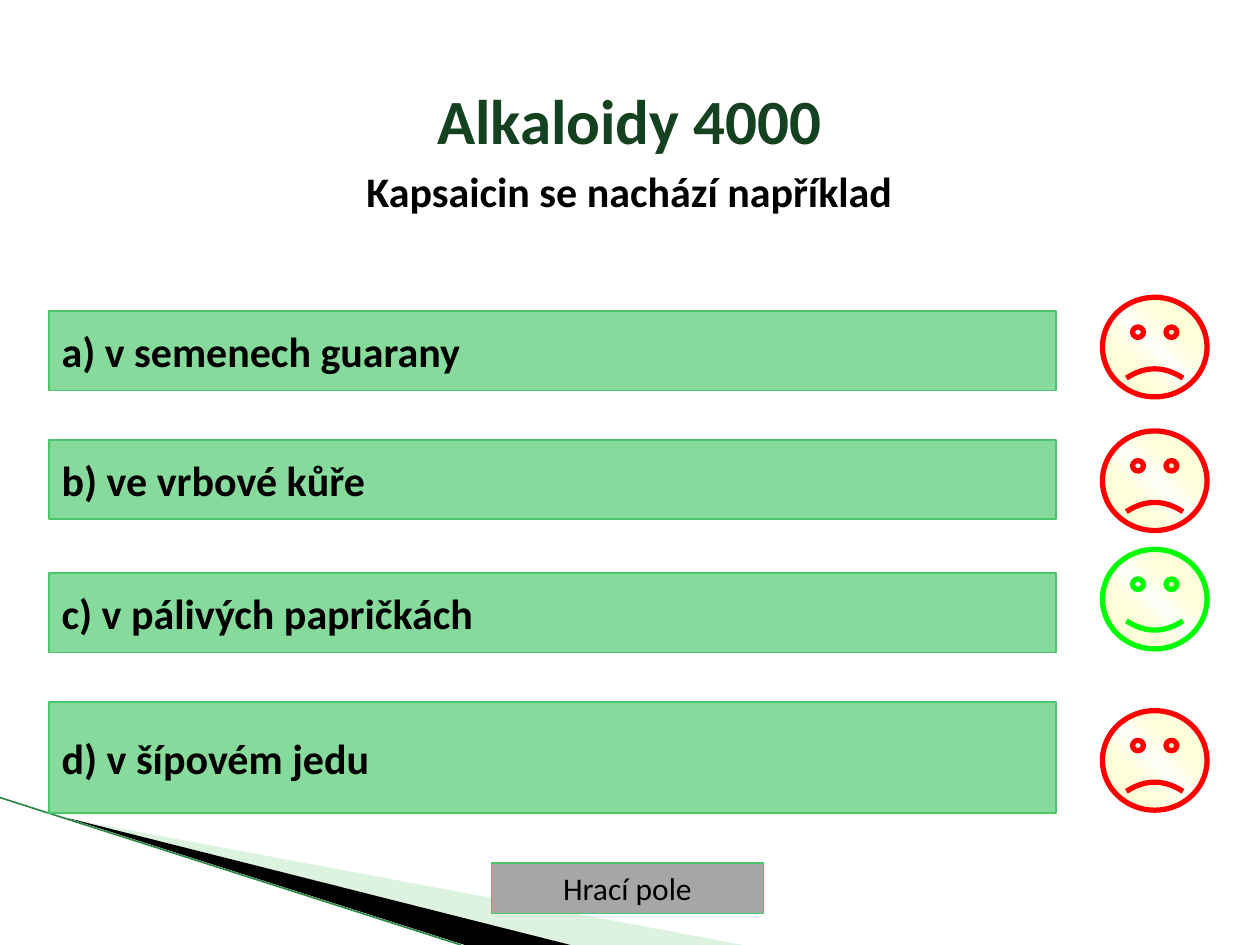
from dataclasses import dataclass

from lxml import etree
from pptx import Presentation
from pptx.dml.color import RGBColor
from pptx.enum.shapes import MSO_CONNECTOR, MSO_SHAPE
from pptx.enum.text import MSO_ANCHOR, PP_ALIGN
from pptx.oxml import parse_xml
from pptx.oxml.ns import nsdecls, qn
from pptx.util import Inches, Pt


@dataclass(frozen=True)
class Theme:
    font: str = "Calibri"
    title_size: int = 36
    body_size: int = 24
    button_size: int = 18
    title: str = "144220"
    text: str = "000000"
    answer: str = "86DA9C"
    button: str = "A6A6A6"
    border: str = "49C76A"
    pale_wedge: str = "A5E1AF"
    dark_wedge: str = "000000"
    edge: str = "2E8B47"
    right: str = "00FF00"
    wrong: str = "FF0000"
    face: str = "FFFF66"
    face_ends: str = "FFFFFF"


THEME = Theme()

# Answer, bar top, bar height, face top, whether it is correct
ANSWERS = [
    ("a) v semenech guarany", 2.47, 0.63, 2.36, False),
    ("b) ve vrbové kůře", 3.49, 0.63, 3.42, False),
    ("c) v pálivých papričkách", 4.55, 0.63, 4.36, True),
    ("d) v šípovém jedu", 5.57, 0.88, 5.64, False),
]


def rgb(color):
    return RGBColor.from_string(color)


def style_text(paragraph, size, color, bold, align):
    paragraph.alignment = align
    for run in paragraph.runs:
        run.font.name = THEME.font
        run.font.size = Pt(size)
        run.font.bold = bold
        run.font.color.rgb = rgb(color)


def add_wedge(slide, points, color, opacity=100):
    start, *rest = [(Inches(x), Inches(y)) for x, y in points]
    builder = slide.shapes.build_freeform(*start)
    builder.add_line_segments(rest, close=True)
    wedge = builder.convert_to_shape()
    wedge.shadow.inherit = False
    wedge.fill.solid()
    wedge.fill.fore_color.rgb = rgb(color)
    wedge.line.fill.background()
    if opacity < 100:
        color_node = wedge.fill._xPr.find(qn("a:solidFill"))[0]
        etree.SubElement(color_node, qn("a:alpha"), val=str(opacity * 1000))


def add_corner_decoration(slide):
    add_wedge(slide, [(0.55, 6.5), (5.9, 7.5), (4.53, 7.5)], THEME.pale_wedge, 40)
    add_wedge(slide, [(0.53, 6.49), (4.53, 7.5), (3.69, 7.5)], THEME.dark_wedge)
    edge = slide.shapes.add_connector(
        MSO_CONNECTOR.STRAIGHT, Inches(0), Inches(6.33), Inches(3.66), Inches(7.5))
    edge.line.color.rgb = rgb(THEME.edge)
    edge.line.width = Pt(0.95)
    etree.SubElement(edge._element.spPr, qn("a:effectLst"))


def add_heading(slide, title, question):
    box = slide.shapes.add_textbox(Inches(0.39), Inches(0.6), Inches(9.21), Inches(0.75))
    frame = box.text_frame
    frame.word_wrap = True
    frame.text = title
    style_text(frame.paragraphs[0], THEME.title_size, THEME.title, True, PP_ALIGN.CENTER)
    subtitle = frame.add_paragraph()
    subtitle.text = question
    subtitle.space_before = Pt(0.2 * THEME.body_size)
    style_text(subtitle, THEME.body_size, THEME.text, True, PP_ALIGN.CENTER)


def add_button(slide, label, left, top, width, height, fill, border_width,
               size, bold, align):
    button = slide.shapes.add_shape(
        MSO_SHAPE.ACTION_BUTTON_CUSTOM,
        Inches(left), Inches(top), Inches(width), Inches(height))
    button.shadow.inherit = False
    button.fill.solid()
    button.fill.fore_color.rgb = rgb(fill)
    button.line.color.rgb = rgb(THEME.border)
    button.line.width = Pt(border_width)
    frame = button.text_frame
    frame.word_wrap = True
    frame.vertical_anchor = MSO_ANCHOR.MIDDLE
    frame.text = label
    style_text(frame.paragraphs[0], size, THEME.text, bold, align)


def face_gradient():
    """Diagonal gradient that is fully transparent in the middle."""
    return parse_xml(
        f'<a:gradFill {nsdecls("a")} rotWithShape="1"><a:gsLst>'
        f'<a:gs pos="0"><a:srgbClr val="{THEME.face_ends}"/></a:gs>'
        f'<a:gs pos="50000"><a:srgbClr val="{THEME.face}"><a:alpha val="0"/></a:srgbClr></a:gs>'
        f'<a:gs pos="100000"><a:srgbClr val="{THEME.face_ends}"/></a:gs>'
        '</a:gsLst><a:lin ang="18900000" scaled="1"/></a:gradFill>')


def add_face(slide, top, correct):
    face = slide.shapes.add_shape(
        MSO_SHAPE.SMILEY_FACE, Inches(8.75), Inches(top), Inches(0.83), Inches(0.79))
    face.shadow.inherit = False
    face.adjustments[0] = 0.047 if correct else -0.047
    face._element.spPr.find(qn("a:prstGeom")).addnext(face_gradient())
    face.line.color.rgb = rgb(THEME.right if correct else THEME.wrong)
    face.line.width = Pt(3)


def main():
    prs = Presentation()
    prs.slide_width, prs.slide_height = Inches(10), Inches(7.5)
    slide = prs.slides.add_slide(prs.slide_layouts[6])

    add_corner_decoration(slide)
    add_button(slide, "Hrací pole", 3.9, 6.85, 2.16, 0.4, THEME.button, 0.75,
               THEME.button_size, False, PP_ALIGN.CENTER)
    add_heading(slide, "Alkaloidy 4000", "Kapsaicin se nachází například")
    for answer, top, height, face_top, correct in ANSWERS:
        add_button(slide, answer, 0.39, top, 7.99, height, THEME.answer, 1,
                   THEME.body_size, True, PP_ALIGN.LEFT)
        add_face(slide, face_top, correct)

    prs.save("out.pptx")


if __name__ == "__main__":
    main()
